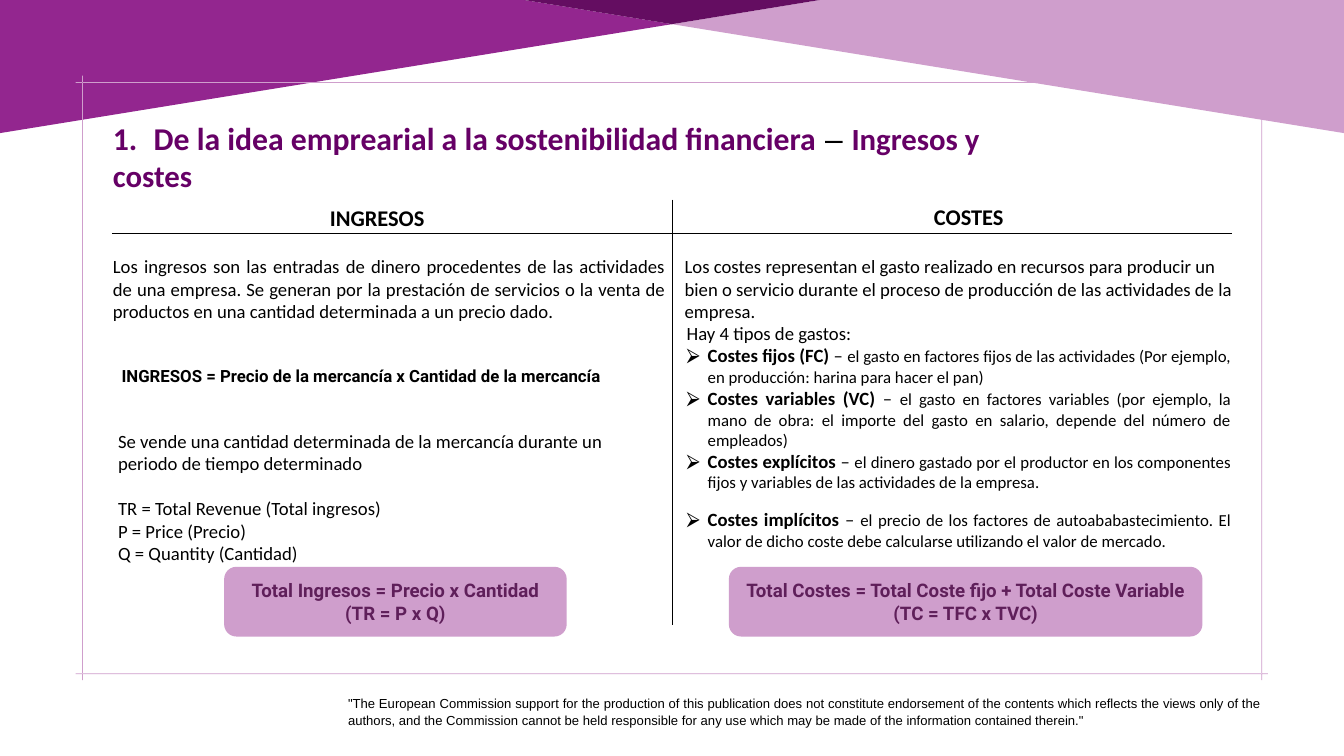
from lxml import etree
from pptx import Presentation
from pptx import util as u
from pptx.dml.color import RGBColor
from pptx.enum import shapes, text
from pptx.oxml.ns import qn

Pt = u.Pt
LEFT, CENTER, JUSTIFY = text.PP_ALIGN.LEFT, text.PP_ALIGN.CENTER, text.PP_ALIGN.JUSTIFY
BLACK, PLUM, LILAC = "000000", "660066", "CF9ECC"


def color(value):
    return RGBColor.from_string(value)


def style(run, size, name="Calibri", ink=BLACK, bold=False):
    run.font.size = Pt(size)
    run.font.name = name
    run.font.bold = bold
    run.font.color.rgb = color(ink)


def place(part, left, top, width, height):
    part.left, part.top, part.width, part.height = map(Pt, (left, top, width, height))


def fill_paragraph(paragraph, runs):
    for words, *look in runs:
        run = paragraph.add_run()
        run.text = words
        style(run, *look)


def write(frame, lines, size, name="Calibri", ink=BLACK, bold=False, align=LEFT):
    frame.word_wrap = True
    frame.text = "\n".join(lines)
    for paragraph in frame.paragraphs:
        paragraph.alignment = align
        for run in paragraph.runs:
            style(run, size, name, ink, bold)
    return frame


def add_text(slide, box, lines, size, **look):
    part = slide.shapes.add_textbox(*map(Pt, box))
    return write(part.text_frame, lines, size, **look)


def add_polygons(slide, contours, fill):
    first, *others = contours
    builder = slide.shapes.build_freeform(*map(Pt, first[0]))
    builder.add_line_segments([tuple(map(Pt, point)) for point in first[1:]])
    for contour in others:
        builder.move_to(*map(Pt, contour[0]))
        builder.add_line_segments([tuple(map(Pt, point)) for point in contour[1:]])
    part = builder.convert_to_shape()
    part.shadow.inherit = False
    part.fill.solid()
    part.fill.fore_color.rgb = color(fill)
    part.line.fill.background()


def add_rule(slide, x1, y1, x2, y2):
    rule = slide.shapes.add_connector(shapes.MSO_CONNECTOR.STRAIGHT, *map(Pt, (x1, y1, x2, y2)))
    rule.line.color.rgb = color(BLACK)
    rule.line.width = Pt(0.75)
    etree.SubElement(rule._element.spPr, qn("a:effectLst"))


def add_formula(slide, box, lines):
    formula = slide.shapes.add_shape(shapes.MSO_SHAPE.ROUNDED_RECTANGLE, *map(Pt, box))
    formula.shadow.inherit = False
    formula.fill.solid()
    formula.fill.fore_color.rgb = color(LILAC)
    formula.line.color.rgb = color(LILAC)
    formula.line.width = Pt(2)
    formula.text_frame.vertical_anchor = text.MSO_ANCHOR.MIDDLE
    write(formula.text_frame, lines, 20, "Roboto", "5F1F5A", True, CENTER)


def set_bullet(paragraph, mark=None, indent=0):
    props = paragraph._p.get_or_add_pPr()
    props.set("marL", str(Pt(indent)))
    props.set("indent", str(-Pt(indent)))
    if not mark:
        etree.SubElement(props, qn("a:buNone"))
        return
    ink = etree.SubElement(props, qn("a:buClr"))
    etree.SubElement(ink, qn("a:srgbClr"), val=BLACK)
    etree.SubElement(props, qn("a:buFont"), typeface="Arial")
    etree.SubElement(props, qn("a:buChar"), char=mark)


def banner(slide, left, top, width, height):
    middle, right, bottom = left + width / 2, left + width, top + height
    peak = (middle, top + 25.9)
    fold_left, fold_right = (middle - 158.4, top), (middle + 158.4, top)
    add_polygons(slide, [[(left, bottom), (left, top), fold_left, peak]], "93268F")
    add_polygons(slide, [[(right, bottom), peak, fold_right, (right, top)]], LILAC)
    add_polygons(slide, [[peak, fold_left, fold_right]], "640D61")


def border(slide, left, top, width, height, overhang=7, thick=0.72):
    right, bottom = left + width, top + height
    strips = [(left - overhang, y, right + overhang, y + thick) for y in (top, bottom)]
    strips += [(x, top - overhang, x + thick, bottom + overhang) for x in (left, right)]
    add_polygons(slide, [[(x1, y1), (x2, y1), (x2, y2), (x1, y2), (x1, y1)]
                         for x1, y1, x2, y2 in strips], LILAC)


def heading(slide, left, top, width, height):
    title = slide.shapes.title
    place(title, left, top, width, height)
    frame = title.text_frame
    frame.word_wrap = True
    frame.auto_size = text.MSO_AUTO_SIZE.NONE
    frame.vertical_anchor = text.MSO_ANCHOR.TOP
    frame.paragraphs[0].alignment = LEFT
    fill_paragraph(frame.paragraphs[0], [
        ("1.\t De la idea emprearial a la sostenibilidad financiera", 34, "Calibri", PLUM, True),
        (" – ", 34, "Arial"),
        ("Ingresos y costes", 33, "Calibri", PLUM, True)])


def dividers(slide, left, top, width, height):
    add_rule(slide, left + width / 2, top, left + width / 2, top + height)
    add_rule(slide, left, top + 36, left + width, top + 36)


def income_column(slide, left, top, width, height):
    add_text(slide, (left + 232.5, top + 0.8, 132, 36), ["INGRESOS"], 24, bold=True)
    add_text(slide, (left, top + 56, width, 97), [
        "Los ingresos son las entradas de dinero procedentes de las actividades de una empresa. "
        "Se generan por la prestación de servicios o la venta de productos en una cantidad "
        "determinada a un precio dado."], 20, align=JUSTIFY)
    add_text(slide, (left + 9.3, top + 174.8, 578, 29), [
        "INGRESOS = Precio de la mercancía x Cantidad de la mercancía"], 18,
        name="Roboto", bold=True)
    example = add_text(slide, (left + 5.7, top + 242.5, 585, 152.6), [
        "Se vende una cantidad determinada de la mercancía durante un periodo de tiempo determinado",
        "TR = Total Revenue (Total ingresos)",
        "P = Price (Precio)",
        "Q = Quantity (Cantidad)"], 20, align=JUSTIFY)
    example.paragraphs[0].alignment = LEFT
    example.paragraphs[1].space_before = Pt(24.4)
    add_formula(slide, (left + 127.4, top + height - 72.7, 365, 72.7),
                ["Total Ingresos = Precio x Cantidad", "(TR = P x Q)"])


def cost_list(body, left, top, width, height):
    costs = [
        ("Costes fijos (FC) ", "el gasto en factores fijos de las actividades "
         "(Por ejemplo, en producción: harina para hacer el pan)"),
        ("Costes variables (VC) ", "el gasto en factores variables (por ejemplo, la mano de "
         "obra: el importe del gasto en salario, depende del número de empleados)"),
        ("Costes explícitos ", "el dinero gastado por el productor en los componentes fijos "
         "y variables de las actividades de la empresa."),
        ("Costes implícitos ", "el precio de los factores de autoababastecimiento. El valor "
         "de dicho coste debe calcularse utilizando el valor de mercado.")]
    place(body, left, top, width, height)
    frame = body.text_frame
    frame.auto_size = text.MSO_AUTO_SIZE.NONE
    write(frame, ["Hay 4 tipos de gastos:"], 20, align=JUSTIFY)
    set_bullet(frame.paragraphs[0])
    for cost, meaning in costs:
        item = frame.add_paragraph()
        item.alignment = JUSTIFY
        set_bullet(item, "⮚", 22.5)
        fill_paragraph(item, [(cost, 20, "Calibri", BLACK, True), ("– ", 20), (meaning, 18)])
    for paragraph in frame.paragraphs:
        paragraph.space_before = Pt(0)
    frame.paragraphs[-1].space_before = Pt(17)


def cost_column(slide, left, top, width, height):
    add_text(slide, (left + 273.6, top, 116, 36), ["COSTES"], 24, bold=True)
    add_text(slide, (left + 6.5, top + 56, width, 80), [
        "Los costes representan el gasto realizado en recursos para producir un bien o servicio "
        "durante el proceso de producción de las actividades de la empresa."], 20)
    cost_list(slide.placeholders[1], left + 8.6, top + 127.3, 597.6, 257)
    add_formula(slide, (left + 61.9, top + height - 72.7, 505.4, 72.7),
                ["Total Costes = Total Coste fijo + Total Coste Variable", "(TC = TFC x TVC)"])


def disclaimer(slide, left, top, width, height):
    note = add_text(slide, (left, top, width, height), [
        '"The European Commission support for the production of this publication does not '
        "constitute endorsement of the contents which reflects the views only of the authors, "
        "and the Commission cannot be held responsible for any use which may be made of the "
        'information contained therein."'], 14, name="Arial", align=JUSTIFY)
    note.paragraphs[0].line_spacing = 1.07


def main():
    deck = Presentation()
    deck.slide_width, deck.slide_height = Pt(1440), Pt(810)
    slide = deck.slides.add_slide(deck.slide_layouts[1])
    banner(slide, 0, 0, 1440, 142.6)
    border(slide, 88, 88, 1263.5, 633.6)
    disclaimer(slide, 365.8, 740.9, 993, 37.4)
    heading(slide, 113.8, 123.8, 996, 88.6)
    dividers(slide, 120, 214, 1200, 455.6)
    income_column(slide, 113.8, 214, 606, 467)
    cost_column(slide, 720, 214, 606, 467)
    deck.save("out.pptx")


if __name__ == "__main__":
    main()
